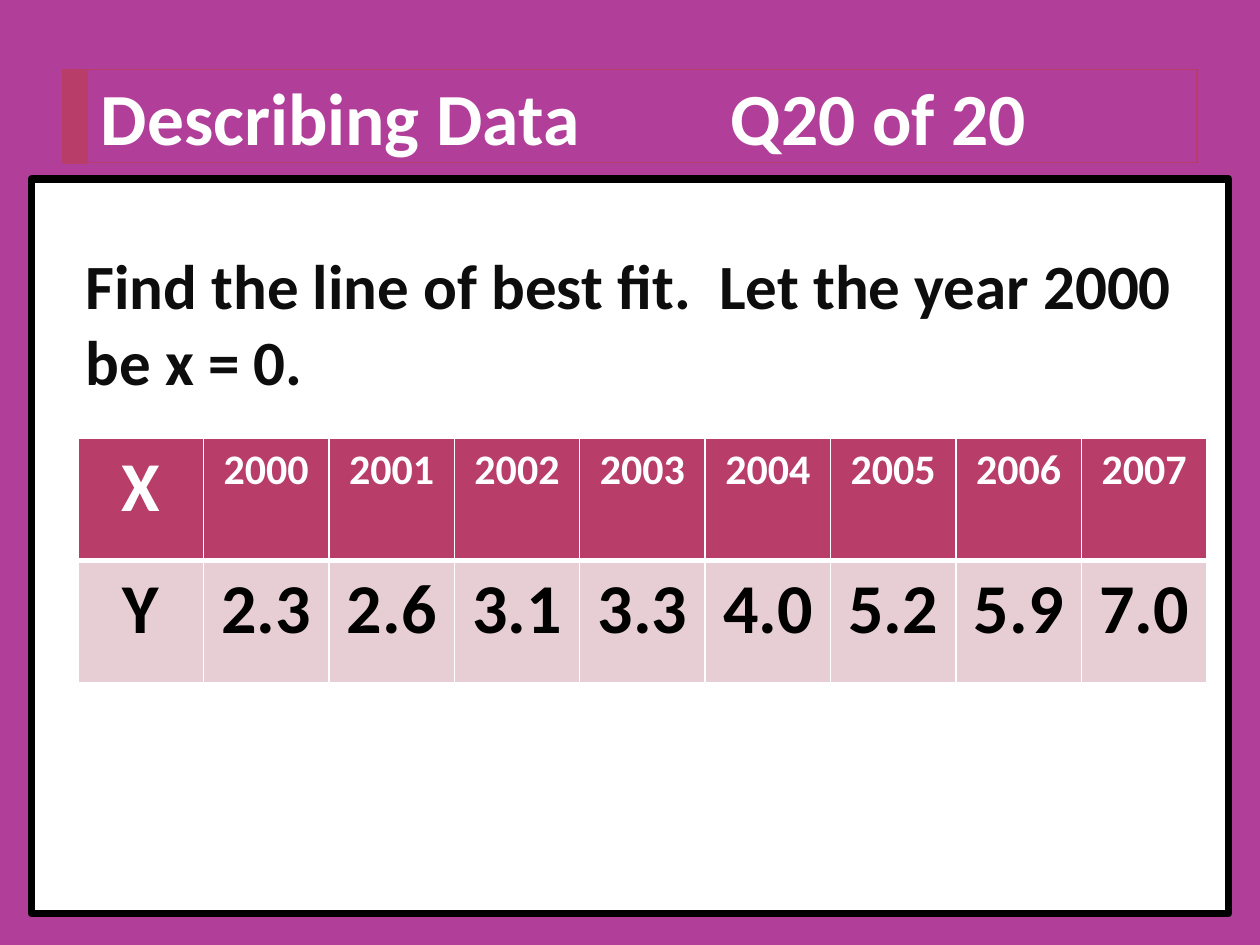
import pptx
import pptx.dml.color
import pptx.enum.shapes
import pptx.enum.text
import pptx.oxml
import pptx.oxml.ns
import pptx.util

Inches, Pt = pptx.util.Inches, pptx.util.Pt
PURPLE, ROSE, PINK = "B13F9A", "B83D68", "E6CED4"
WHITE, BLACK, INK = "FFFFFF", "000000", "0D0D0D"
YEARS = ["X"] + [str(year) for year in range(2000, 2008)]
VALUES = ["Y", "2.3", "2.6", "3.1", "3.3", "4.0", "5.2", "5.9", "7.0"]


def color(value):
    return pptx.dml.color.RGBColor.from_string(value)


def paint(fill, value):
    fill.solid()
    fill.fore_color.rgb = color(value)


def add_run(p, text, size, value):
    r = p.add_run()
    r.text = text
    r.font.name = "Calibri"
    r.font.size = Pt(size)
    r.font.bold = True
    r.font.color.rgb = color(value)


def add_rect(s, box, fill=None, line=None, width=0.75):
    sp = s.shapes.add_shape(pptx.enum.shapes.MSO_SHAPE.RECTANGLE,
                            *map(Inches, box))
    sp.shadow.inherit = False
    if fill:
        paint(sp.fill, fill)
    else:
        sp.fill.background()
    if line:
        paint(sp.line.fill, line)
        sp.line.width = Pt(width)
    else:
        sp.line.fill.background()
    return sp


def add_title(s, left_text, right_text):
    sp = add_rect(s, (0.5, 0.55, 9, 0.74), line=ROSE)
    tf = sp.text_frame
    tf.margin_left = Inches(0.3)
    tf.vertical_anchor = pptx.enum.text.MSO_ANCHOR.MIDDLE
    p = tf.paragraphs[0]
    p.alignment = pptx.enum.text.PP_ALIGN.LEFT
    # One tab stop places the question number
    p._p.get_or_add_pPr().append(pptx.oxml.parse_xml(
        f'<a:tabLst {pptx.oxml.ns.nsdecls("a")}>'
        f'<a:tab pos="{Inches(5)}" algn="l"/></a:tabLst>'))
    add_run(p, f"{left_text}\t{right_text}", 42, WHITE)


def add_question(s, text):
    sp = s.shapes.add_textbox(*map(Inches, (0.58, 1.91, 9, 1.31)))
    tf = sp.text_frame
    tf.word_wrap = True
    add_run(tf.paragraphs[0], text, 36, INK)


def set_borders(cell, widths):
    tc_pr = cell._tc.get_or_add_tcPr()
    for i, (side, width) in enumerate(widths.items()):
        tc_pr.insert(i, pptx.oxml.parse_xml(
            f'<a:ln{side} {pptx.oxml.ns.nsdecls("a")} w="{Pt(width)}">'
            f'<a:solidFill><a:srgbClr val="{WHITE}"/></a:solidFill>'
            f'</a:ln{side}>'))


def add_data_table(s, rows):
    frame = s.shapes.add_table(len(rows), len(rows[0]),
                               *map(Inches, (0.62, 3.48, 8.96, 1.94)))
    table = frame.table
    for i, row in enumerate(rows):
        header = i == 0
        for j, text in enumerate(row):
            cell = table.cell(i, j)
            paint(cell.fill, ROSE if header else PINK)
            # A thick rule divides the two rows
            set_borders(cell, {"L": 1, "R": 1, "T": 1 if header else 3,
                               "B": 3 if header else 1})
            p = cell.text_frame.paragraphs[0]
            p.alignment = pptx.enum.text.PP_ALIGN.CENTER
            size = 24 if header and j > 0 else 40
            add_run(p, text, size, WHITE if header else BLACK)


def main():
    prs = pptx.Presentation()
    prs.slide_width, prs.slide_height = Inches(10), Inches(7.5)
    s = prs.slides.add_slide(prs.slide_layouts[6])
    paint(s.background.fill, PURPLE)

    # Title bar with accent
    add_rect(s, (0.5, 0.55, 0.2, 0.75), fill=ROSE)
    add_title(s, "Describing Data", "Q20 of 20")

    # Question panel
    add_rect(s, (0.25, 1.42, 9.5, 5.83), WHITE, BLACK, 4.33)
    add_question(s, "Find the line of best fit.  Let the year 2000 be x = 0.")
    add_data_table(s, [YEARS, VALUES])

    prs.save("out.pptx")


if __name__ == "__main__":
    main()
